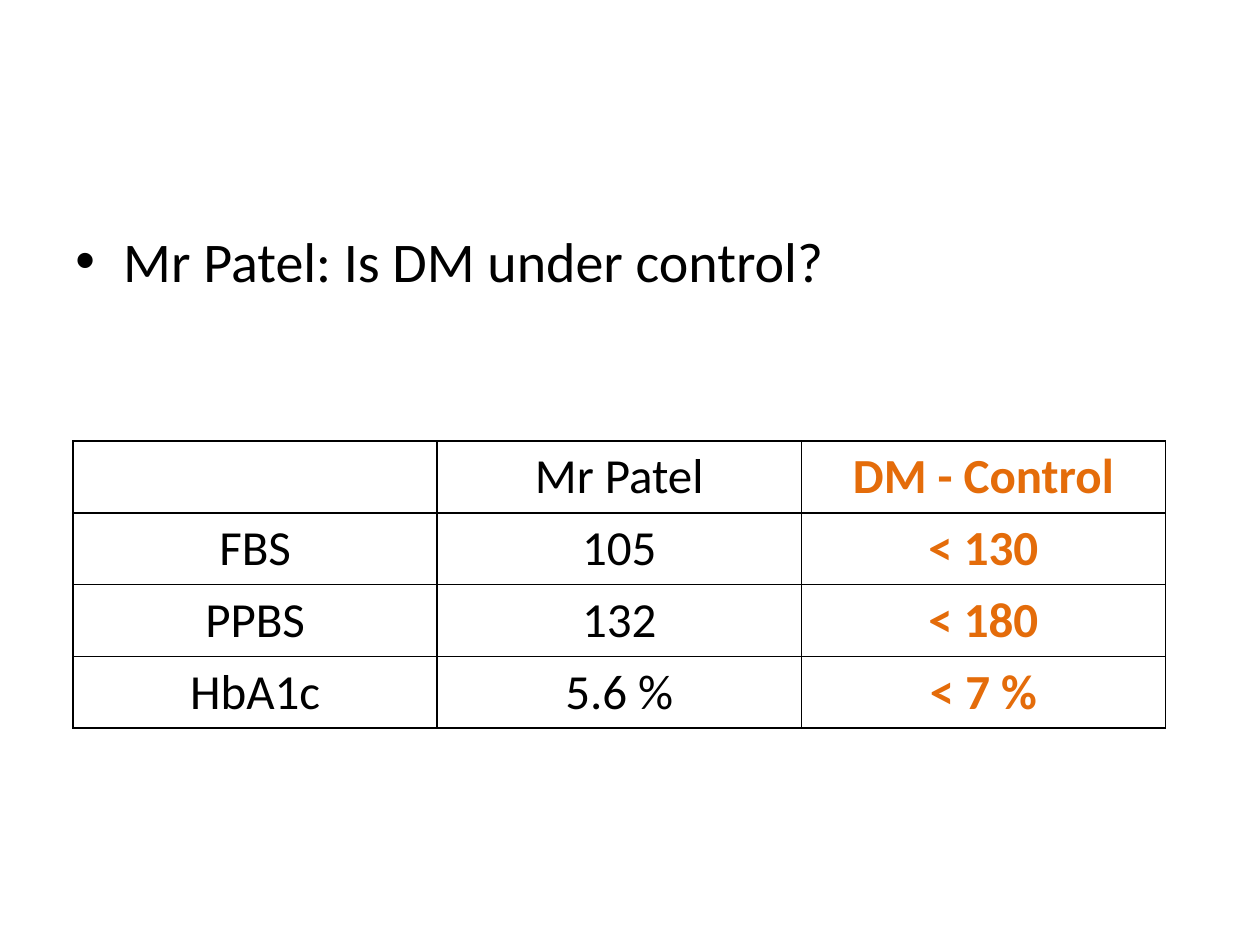
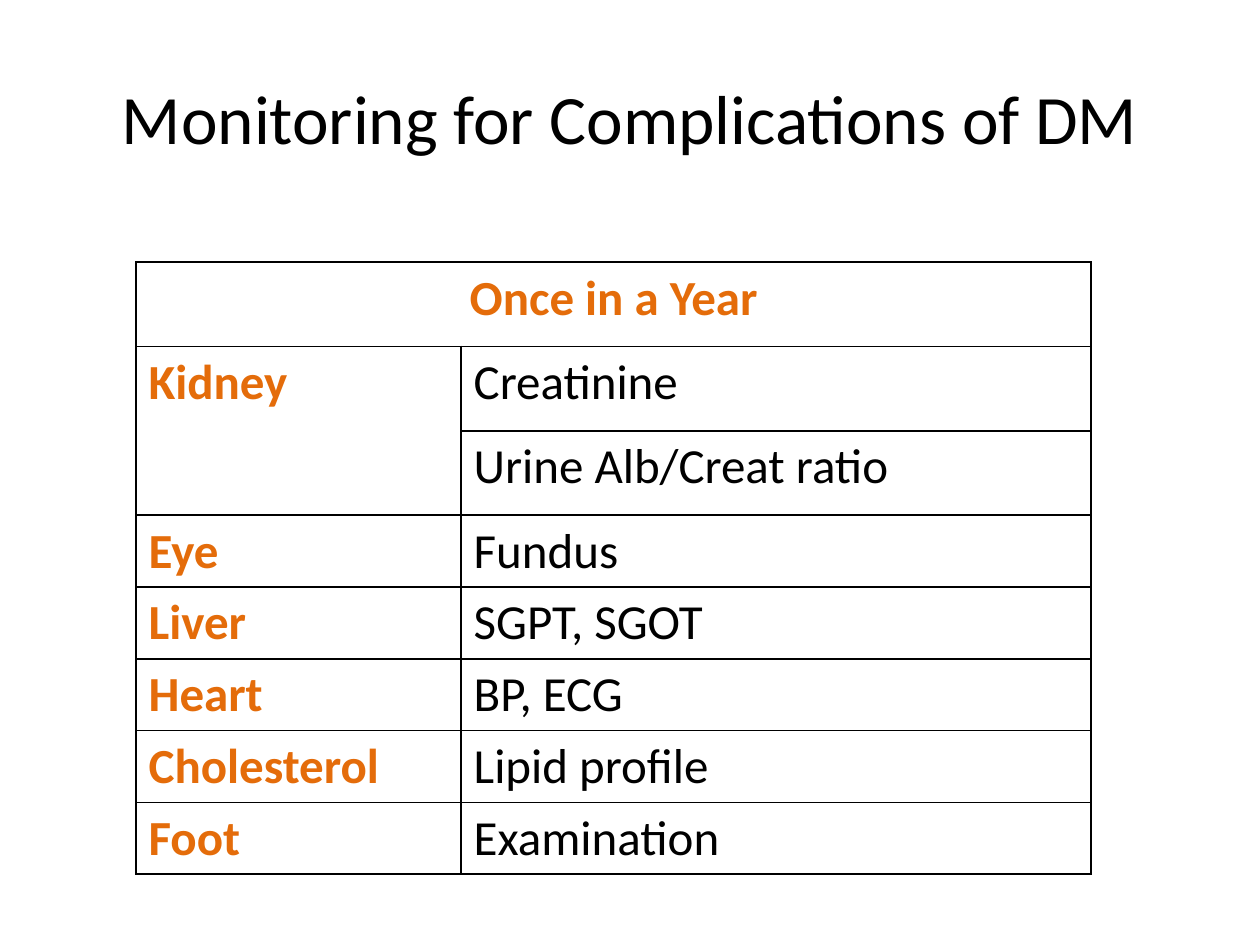
import lxml.etree
import pptx
import pptx.dml.color
import pptx.enum.text
import pptx.oxml.ns
import pptx.util

Inches = pptx.util.Inches
Pt = pptx.util.Pt
ALIGN = pptx.enum.text.PP_ALIGN
ANCHOR = pptx.enum.text.MSO_ANCHOR

COLOURS = {"text": "000000", "accent": "E46C0A", "paper": "FFFFFF", "border": "000000"}
FONT = "Calibri"
CELL_SIZE = 28
ROW_HEIGHT = 0.57
TALL_ROW_HEIGHT = 0.67

QUESTION = "Mr Patel: Is DM under control?"
CONTROL_ROWS = [
    ("", "Mr Patel", "DM - Control"),
    ("FBS", "105", "< 130"),
    ("PPBS", "132", "< 180"),
    ("HbA1c", "5.6 %", "< 7 %"),
]

MONITORING_TITLE = "Monitoring for Complications of DM"
MONITORING_HEADER = "Once in a Year"
MONITORING = [
    ("Kidney", ["Creatinine", "Urine Alb/Creat ratio"]),
    ("Eye", ["Fundus"]),
    ("Liver", ["SGPT, SGOT"]),
    ("Heart", ["BP, ECG"]),
    ("Cholesterol", ["Lipid profile"]),
    ("Foot", ["Examination"]),
]


def colour(name):
    return pptx.dml.color.RGBColor.from_string(COLOURS[name])


def add_element(parent, tag, **attributes):
    return lxml.etree.SubElement(parent, pptx.oxml.ns.qn(tag), attributes)


def style(paragraph, size, align=ALIGN.LEFT, colour_name="text", bold=False):
    paragraph.alignment = align
    font = paragraph.font
    font.name = FONT
    font.size = Pt(size)
    font.bold = bold
    font.color.rgb = colour(colour_name)


def add_text(page, text, left, top, width, height, anchor):
    box = page.shapes.add_textbox(Inches(left), Inches(top), Inches(width), Inches(height))
    frame = box.text_frame
    frame.word_wrap = True
    frame.vertical_anchor = anchor
    paragraph = frame.paragraphs[0]
    paragraph.text = text
    return paragraph


def add_bullet(paragraph):
    properties = paragraph._p.get_or_add_pPr()
    indent = Inches(0.38)
    properties.set("marL", str(indent))
    properties.set("indent", str(-indent))
    add_element(properties, "a:buFont", typeface="Arial")
    add_element(properties, "a:buChar", char="•")


def frame_cell(cell):
    properties = cell._tc.get_or_add_tcPr()
    for side in ("a:lnL", "a:lnR", "a:lnT", "a:lnB"):
        line = add_element(properties, side, w=str(Pt(1)))
        fill = add_element(line, "a:solidFill")
        add_element(fill, "a:srgbClr", val=COLOURS["border"])
    cell.fill.solid()
    cell.fill.fore_color.rgb = colour("paper")


def add_grid(page, rows, left, top, widths, heights, accent_column, align):
    table = page.shapes.add_table(
        len(rows), len(widths), Inches(left), Inches(top),
        Inches(sum(widths)), Inches(sum(heights)),
    ).table
    table.first_row = table.horz_banding = False
    for column, width in zip(table.columns, widths):
        column.width = Inches(width)
    for row, height in zip(table.rows, heights):
        row.height = Inches(height)
    for row_index, row in enumerate(rows):
        for column_index, text in enumerate(row):
            cell = table.cell(row_index, column_index)
            cell.text = text
            accented = column_index == accent_column
            style(cell.text_frame.paragraphs[0], CELL_SIZE, align,
                  "accent" if accented else "text", accented)
            frame_cell(cell)
    return table


def build_control_page(page):
    question = add_text(page, QUESTION, 0.5, 1.75, 9, 4.95, ANCHOR.TOP)
    add_bullet(question)
    style(question, 32)
    add_grid(page, CONTROL_ROWS, 0.58, 3.5, [2.89] * 3,
             [ROW_HEIGHT] * len(CONTROL_ROWS), 2, ALIGN.CENTER)


def build_monitoring_page(page):
    title = add_text(page, MONITORING_TITLE, 0.5, 0.3, 9, 1.25, ANCHOR.MIDDLE)
    style(title, 39.6, ALIGN.CENTER)

    rows = [(MONITORING_HEADER, "")]
    heights = [TALL_ROW_HEIGHT]
    merges = [(0, 0, 0, 1)]
    for organ, tests in MONITORING:
        first = len(rows)
        for index, test in enumerate(tests):
            rows.append(("" if index else organ, test))
            heights.append(TALL_ROW_HEIGHT if len(tests) > 1 else ROW_HEIGHT)
        if len(tests) > 1:
            merges.append((first, 0, len(rows) - 1, 0))

    table = add_grid(page, rows, 1.08, 2.08, [2.58, 5], heights, 0, ALIGN.LEFT)
    for top, left, bottom, right in merges:
        table.cell(top, left).merge(table.cell(bottom, right))
    table.cell(0, 0).text_frame.paragraphs[0].alignment = ALIGN.CENTER


def main():
    deck = pptx.Presentation()
    deck.slide_width = Inches(10)
    deck.slide_height = Inches(7.5)
    for build in (build_control_page, build_monitoring_page):
        build(deck.slides.add_slide(deck.slide_layouts[6]))
    deck.save("out.pptx")


if __name__ == "__main__":
    main()
